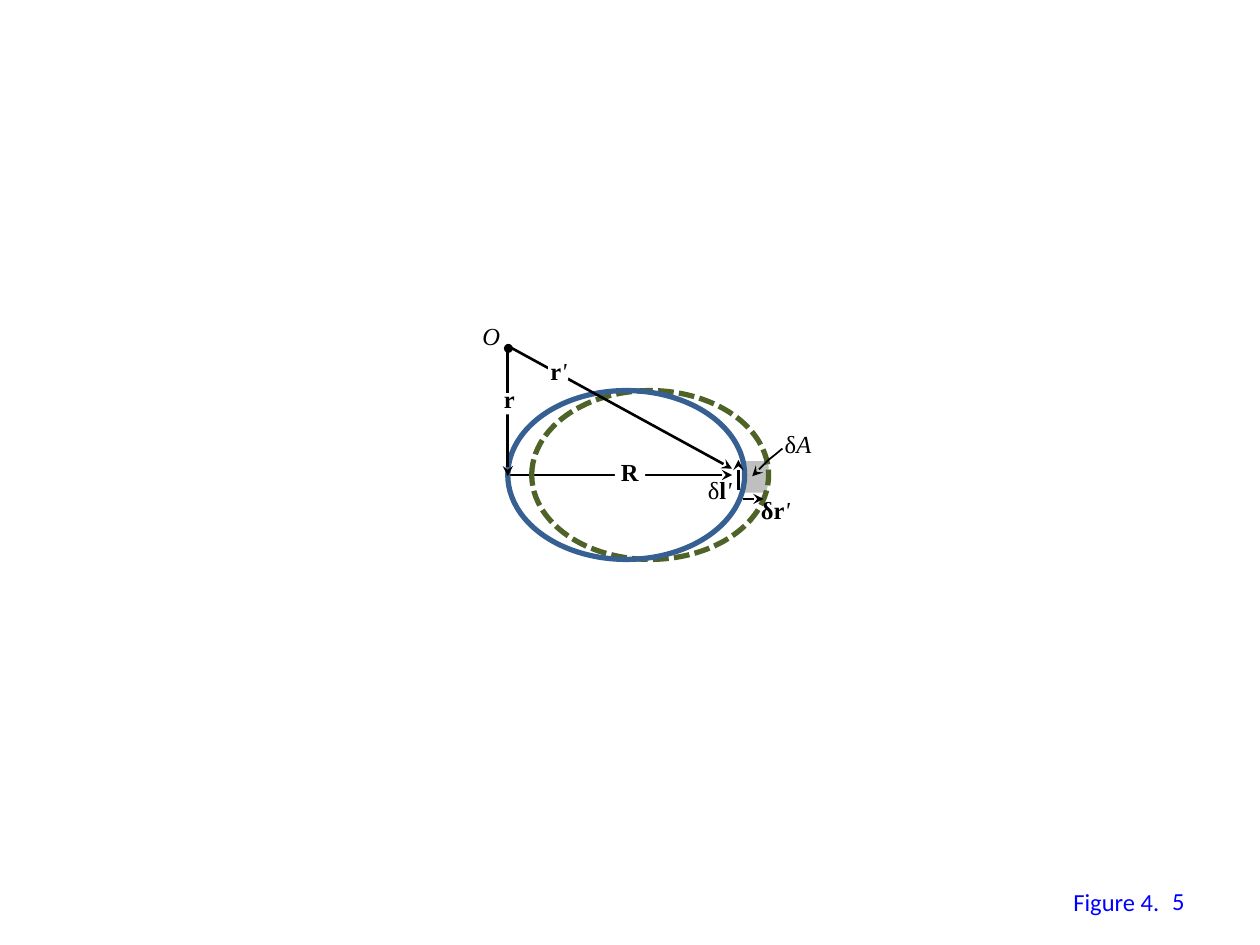
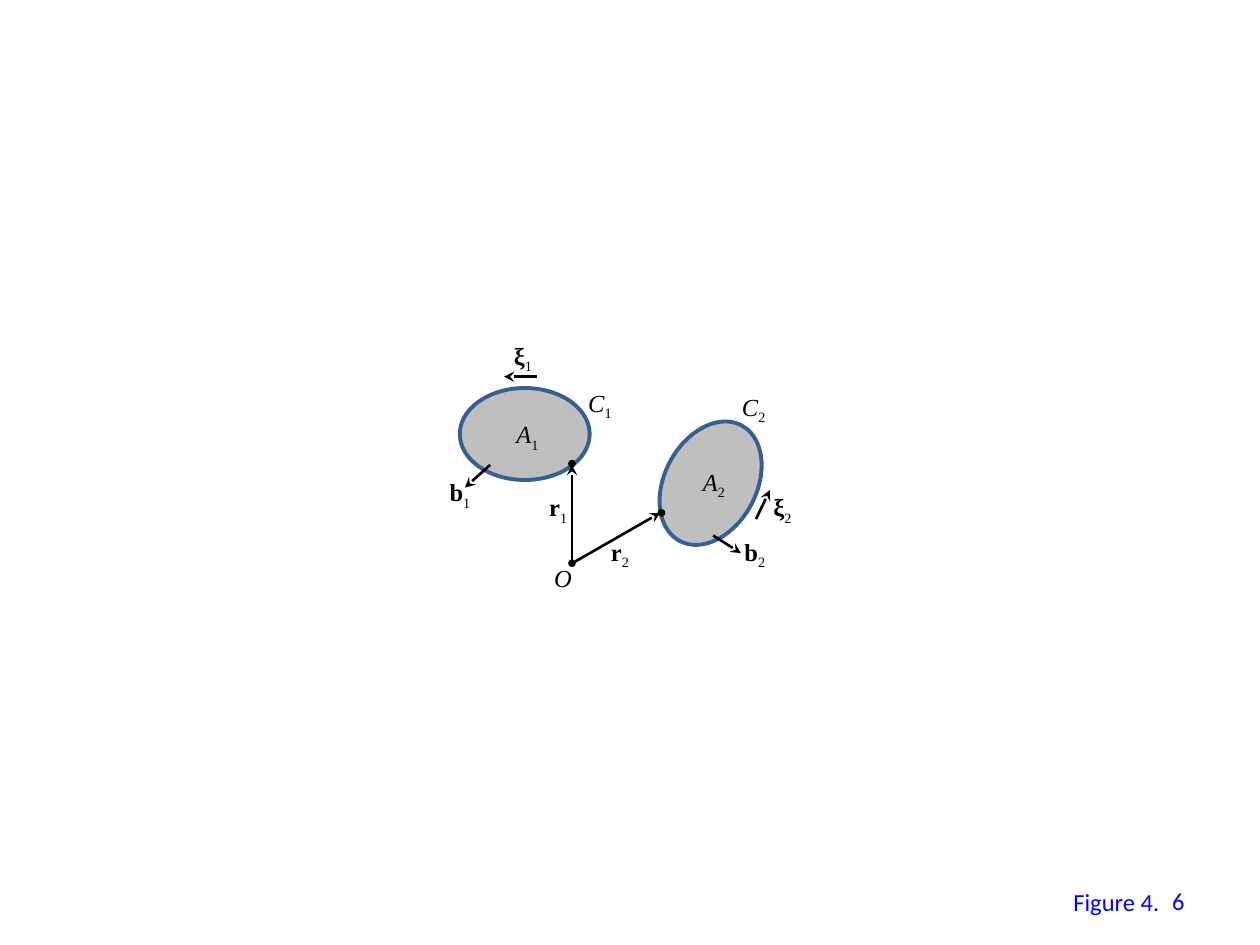
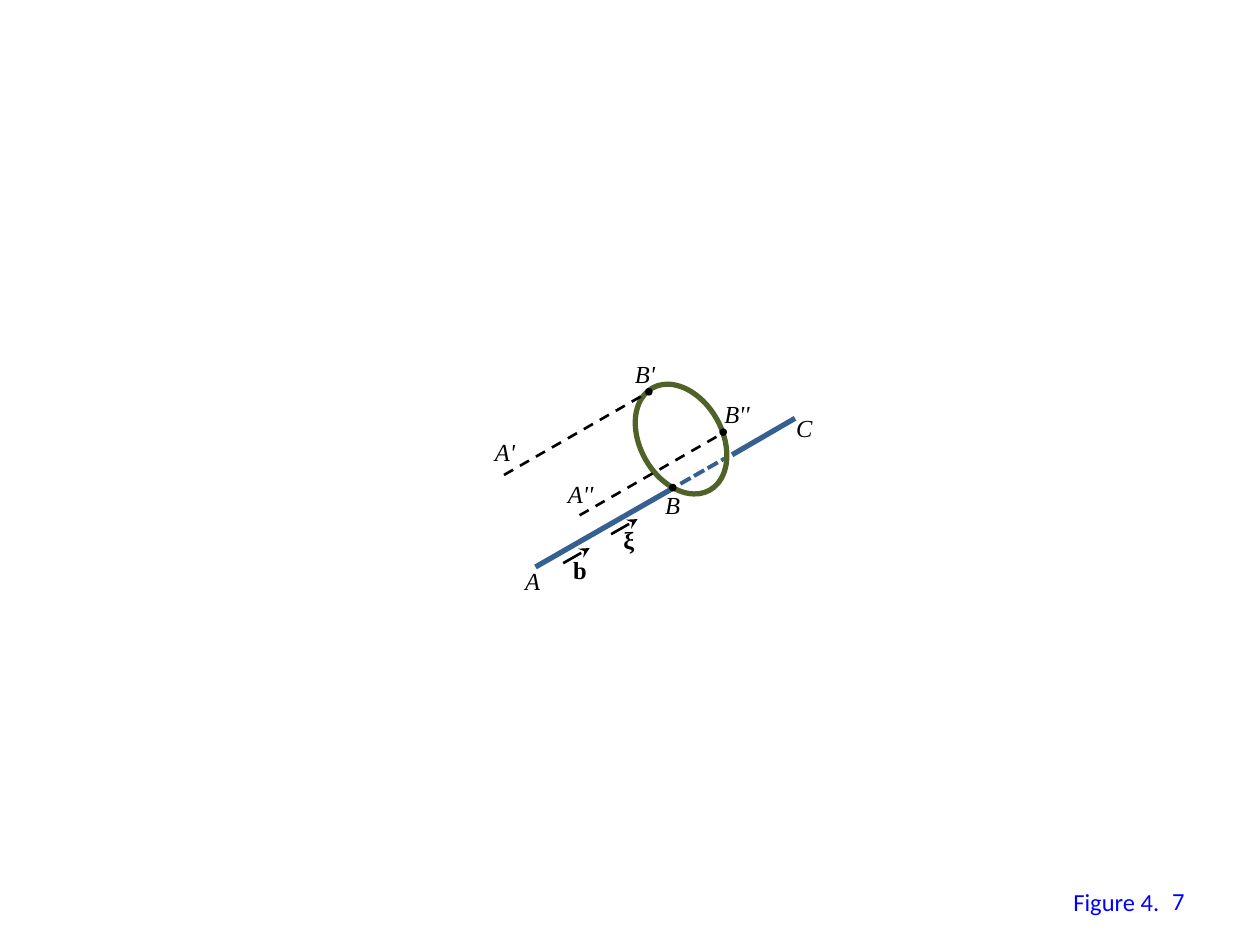
from dataclasses import dataclass
from typing import Any, Optional

import pptx
import pptx.dml.color
import pptx.enum.dml
import pptx.enum.shapes
import pptx.enum.text
import pptx.oxml.ns
import pptx.util
from lxml import etree

Inches = pptx.util.Inches
Point = tuple[float, float]
Runs = tuple[tuple[str, str], ...]

# Shared colours, fonts and sizes
BLACK, WHITE, GREY = "000000", "FFFFFF", "BFBFBF"
BLUE, GREEN, CAPTION_BLUE = "376092", "4F6228", "0000FF"
SYMBOL_FONT, CAPTION_FONT = "Times New Roman", "Calibri"
TEXT_SIZE = 14
LABEL_HEIGHT = 0.34
DOT_SIZE = 0.06
SHORT_DASH = pptx.enum.dml.MSO_LINE.SQUARE_DOT
DASH = pptx.enum.dml.MSO_LINE.DASH

# Run styles: b bold, i italic, s subscript, empty plain
RUN_STYLES = {
    "": {"bold": False, "italic": False},
    "b": {"bold": True, "italic": False},
    "i": {"bold": False, "italic": True},
    "s": {"bold": False, "italic": False},
}


@dataclass
class Label:
    left: float
    top: float
    width: float
    runs: Runs


@dataclass
class Line:
    start: Point
    end: Point
    color: str = BLACK
    weight: float = 1.5
    dash: Any = None
    arrow: bool = False


@dataclass
class Block:
    left: float
    top: float
    width: float
    height: float
    fill: Optional[str] = None
    outline: Optional[str] = None
    weight: float = 3
    dash: Any = None
    rotation: float = 0
    preset: Any = pptx.enum.shapes.MSO_SHAPE.OVAL


@dataclass
class Path:
    points: list[Point]
    fill: Optional[str] = None
    outline: Optional[str] = None
    weight: float = 1
    arrow: bool = False


def arrow(start: Point, end: Point) -> Line:
    return Line(start, end, arrow=True)


def dot(left: float, top: float) -> Block:
    return Block(left, top, DOT_SIZE, DOT_SIZE, BLACK)


def mask(left: float, top: float, width: float) -> Block:
    """White gap in a line, behind its label."""
    return Block(left, top, width, 0.17, WHITE,
                 preset=pptx.enum.shapes.MSO_SHAPE.RECTANGLE)


def italic(left: float, top: float, width: float, text: str) -> Label:
    return Label(left, top, width, ((text, "i"),))


def bold(left: float, top: float, width: float, text: str) -> Label:
    return Label(left, top, width, ((text, "b"),))


def indexed(left: float, top: float, width: float,
            text: str, style: str, index: str) -> Label:
    return Label(left, top, width, ((text, style), (index, "s")))


# Formatting
def rgb(color: str) -> pptx.dml.color.RGBColor:
    return pptx.dml.color.RGBColor.from_string(color)


def set_format(target: Any, values: dict[str, Any]) -> None:
    for name, value in values.items():
        setattr(target, name, value)


def format_line(line: Any, color: Optional[str], weight: float,
                dash: Any = None, has_arrow: bool = False) -> None:
    if color is None:
        line.fill.background()
        return
    line.color.rgb = rgb(color)
    line.width = pptx.util.Pt(weight)
    if dash is not None:
        line.dash_style = dash
    if has_arrow:
        etree.SubElement(line._get_or_add_ln(), pptx.oxml.ns.qn("a:tailEnd"),
                         type="stealth")


def format_fill(shape: Any, color: Optional[str]) -> None:
    if color is None:
        shape.fill.background()
    else:
        shape.fill.solid()
        shape.fill.fore_color.rgb = rgb(color)


def add_text(slide: Any, box: tuple[float, ...], runs: Runs, font: str, color: str,
             frame_values: dict[str, Any], align: Any = None) -> None:
    frame = slide.shapes.add_textbox(*map(Inches, box)).text_frame
    set_format(frame, frame_values)
    paragraph = frame.paragraphs[0]
    paragraph.alignment = align
    for text, style in runs:
        run = paragraph.add_run()
        run.text = text
        set_format(run.font, {"name": font, "size": pptx.util.Pt(TEXT_SIZE),
                              **RUN_STYLES[style]})
        run.font.color.rgb = rgb(color)
        if style == "s":
            run._r.get_or_add_rPr().set("baseline", "-25000")


FITTED = {"word_wrap": False,
          "auto_size": pptx.enum.text.MSO_AUTO_SIZE.SHAPE_TO_FIT_TEXT}
CENTRED = {"word_wrap": True,
           "vertical_anchor": pptx.enum.text.MSO_ANCHOR.MIDDLE}


# Drawing of each kind of part
def draw_label(slide: Any, label: Label) -> None:
    add_text(slide, (label.left, label.top, label.width, LABEL_HEIGHT),
             label.runs, SYMBOL_FONT, BLACK, FITTED)


def draw_line(slide: Any, line: Line) -> None:
    connector = slide.shapes.add_connector(
        pptx.enum.shapes.MSO_CONNECTOR.STRAIGHT,
        *map(Inches, line.start + line.end))
    format_line(connector.line, line.color, line.weight, line.dash, line.arrow)
    etree.SubElement(connector._element.spPr, pptx.oxml.ns.qn("a:effectLst"))


def draw_block(slide: Any, block: Block) -> None:
    shape = slide.shapes.add_shape(
        block.preset,
        *map(Inches, (block.left, block.top, block.width, block.height)))
    shape.rotation = block.rotation
    shape.shadow.inherit = False
    format_fill(shape, block.fill)
    format_line(shape.line, block.outline, block.weight, block.dash)


def draw_path(slide: Any, path: Path) -> None:
    first, *rest = [(Inches(x), Inches(y)) for x, y in path.points]
    builder = slide.shapes.build_freeform(*first)
    builder.add_line_segments(rest, close=path.fill is not None)
    shape = builder.convert_to_shape()
    shape.shadow.inherit = False
    format_fill(shape, path.fill)
    format_line(shape.line, path.outline, path.weight, has_arrow=path.arrow)


def draw_caption(slide: Any, number: int) -> None:
    add_text(slide, (8.42, 6.99, 0.89, LABEL_HEIGHT), (("Figure 4.", ""),),
             CAPTION_FONT, CAPTION_BLUE, FITTED)
    add_text(slide, (7.17, 6.95, 2.33, 0.4), ((str(number), ""),),
             CAPTION_FONT, CAPTION_BLUE, CENTRED, pptx.enum.text.PP_ALIGN.RIGHT)


DRAW = {Label: draw_label, Line: draw_line, Block: draw_block, Path: draw_path}

# Displaced circuit: area swept by an element of the loop
DISPLACED_LOOP = [
    Path([(5.91, 3.66), (6.09, 3.66), (6.1, 3.7), (6.1, 3.8), (6.09, 3.87),
          (6.08, 3.91), (5.89, 3.91), (5.91, 3.84), (5.92, 3.75)], GREY),
    arrow((4.03, 3.77), (5.81, 3.77)),
    Block(4.22, 3.1, 1.88, 1.34, outline=GREEN, dash=SHORT_DASH),
    mask(4.88, 3.68, 0.24),
    italic(3.73, 2.5, 0.4, "O"),
    bold(4.83, 3.58, 0.34, "R"),
    Label(5.52, 3.72, 0.46, (("δ", ""), ("l", "b"), ("'", "i"))),
    Label(5.94, 3.88, 0.49, (("δr", "b"), ("'", "i"))),
    Label(6.13, 3.36, 0.44, (("δ", ""), ("A", "i"))),
    Block(4.03, 3.1, 1.88, 1.34, outline=BLUE),
    Path([(6.21, 3.56), (6.15, 3.61), (6.1, 3.65), (6.04, 3.71), (5.97, 3.78)],
         outline=BLACK, arrow=True),
    arrow((4.03, 2.75), (4.03, 3.78)),
    arrow((4.02, 2.74), (5.81, 3.72)),
    arrow((5.86, 3.89), (5.86, 3.65)),
    arrow((5.9, 3.96), (6.06, 3.96)),
    mask(3.95, 3.12, 0.13),
    bold(3.9, 3, 0.29, "r"),
    mask(4.35, 2.85, 0.16),
    Label(4.27, 2.78, 0.38, (("r", "b"), ("'", "i"))),
    Block(4.01, 2.74, 0.05, 0.05, BLACK, BLACK, 1.5),
]

# Two loops with their areas, vectors and common origin
TWO_LOOPS = [
    Block(3.65, 3.08, 1.03, 0.73, GREY, BLUE, 2.25),
    Block(5.12, 3.47, 1.04, 0.73, GREY, BLUE, 2.25, rotation=298.3),
    arrow((4.56, 4.46), (5.24, 4.07)),
    arrow((4.54, 4.47), (4.54, 3.69)),
    arrow((5.66, 4.25), (5.88, 4.39)),
    arrow((6, 4.12), (6.11, 3.89)),
    arrow((3.89, 3.69), (3.69, 3.87)),
    arrow((4.26, 2.99), (4, 2.99)),
    indexed(4.57, 3.03, 0.45, "C", "i", "1"),
    indexed(5.79, 3.06, 0.45, "C", "i", "2"),
    indexed(5.81, 4.21, 0.4, "b", "b", "2"),
    indexed(3.47, 3.74, 0.4, "b", "b", "1"),
    indexed(4.75, 4.21, 0.38, "r", "b", "2"),
    indexed(4.26, 3.86, 0.38, "r", "b", "1"),
    italic(4.3, 4.42, 0.4, "O"),
    dot(4.51, 4.44),
    indexed(5.48, 3.66, 0.42, "A", "i", "2"),
    indexed(4, 3.28, 0.41, "A", "i", "1"),
    indexed(3.98, 2.66, 0.37, "ξ", "b", "1"),
    indexed(6.04, 3.86, 0.37, "ξ", "b", "2"),
    dot(5.22, 4.04),
    dot(4.51, 3.65),
]

# Dislocation line through a closed circuit
LINE_AND_CIRCUIT = [
    Line((5.4, 3.84), (5.75, 3.64), BLUE, 2.25, SHORT_DASH),
    arrow((4.85, 4.24), (5.06, 4.12)),
    italic(4.94, 2.8, 0.42, "B'"),
    bold(4.85, 4.12, 0.3, "ξ"),
    Block(4.94, 3.16, 0.93, 0.65, outline=GREEN, rotation=60.7),
    arrow((4.47, 4.47), (4.68, 4.35)),
    Line((4.25, 4.5), (5.35, 3.87), BLUE, 3),
    Line((4, 3.77), (5.15, 3.11), dash=DASH),
    Line((4.6, 4.09), (5.75, 3.43), dash=DASH),
    italic(3.83, 3.42, 0.43, "A'"),
    italic(4.07, 4.44, 0.37, "A"),
    italic(5.18, 3.84, 0.37, "B"),
    italic(5.65, 3.12, 0.47, "B''"),
    italic(4.41, 3.75, 0.47, "A''"),
    dot(5.12, 3.08),
    dot(5.71, 3.4),
    bold(4.45, 4.36, 0.31, "b"),
    dot(5.31, 3.84),
    italic(6.22, 3.23, 0.39, "C"),
    Line((5.81, 3.61), (6.31, 3.32), BLUE, 3),
]


def main() -> None:
    deck = pptx.Presentation()
    deck.slide_width, deck.slide_height = Inches(10), Inches(7.5)
    blank = deck.slide_layouts[6]
    figures = (DISPLACED_LOOP, TWO_LOOPS, LINE_AND_CIRCUIT)
    for number, parts in enumerate(figures, start=5):
        slide = deck.slides.add_slide(blank)
        for part in parts:
            DRAW[type(part)](slide, part)
        draw_caption(slide, number)
    deck.save("out.pptx")


if __name__ == "__main__":
    main()
